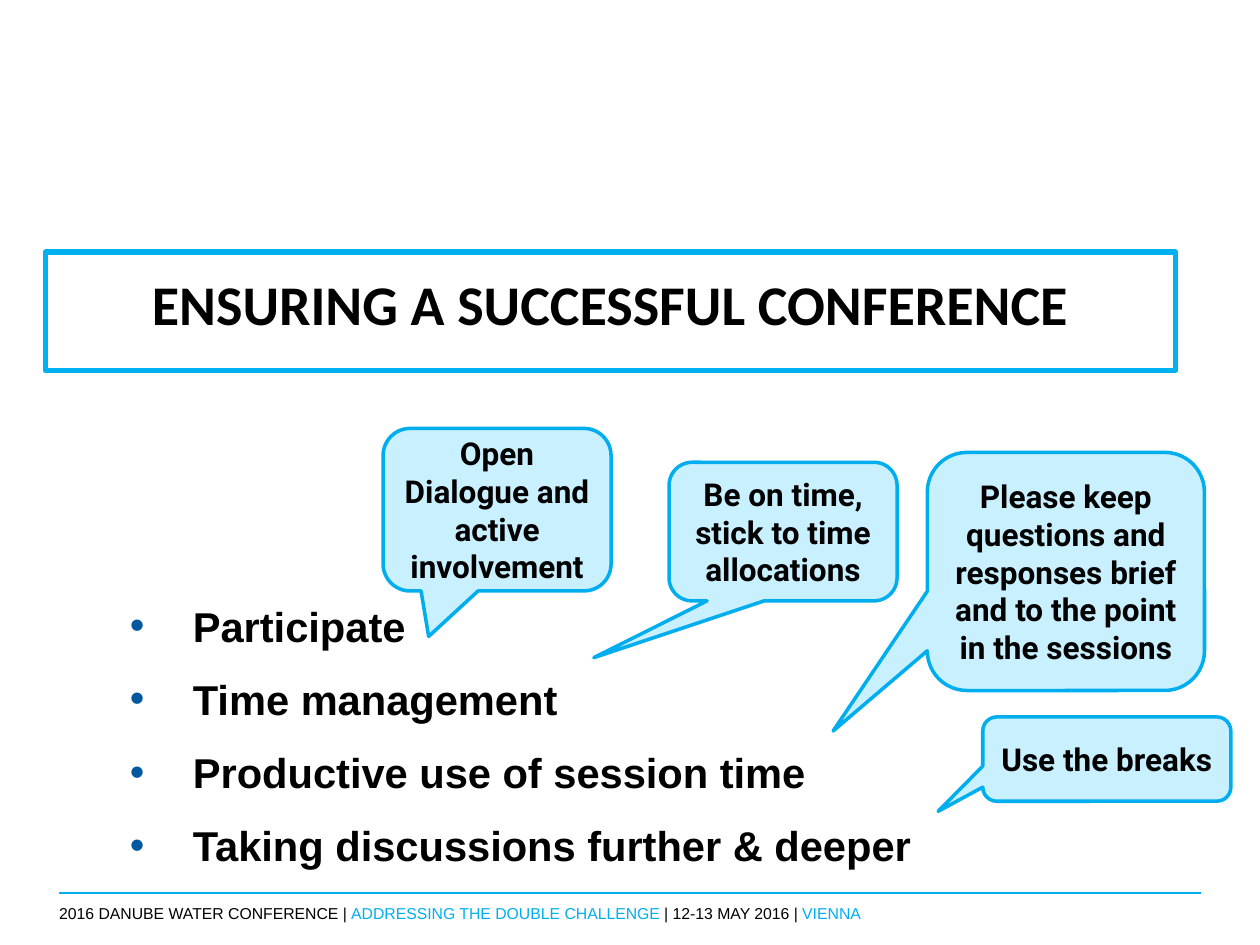
from dataclasses import dataclass

import lxml.etree
import pptx
import pptx.dml.color
import pptx.enum.shapes
import pptx.enum.text
import pptx.oxml.ns
import pptx.shapes.autoshape
import pptx.slide
import pptx.text.text
import pptx.util

Pt = pptx.util.Pt
RGB = pptx.dml.color.RGBColor
Align = pptx.enum.text.PP_ALIGN
Anchor = pptx.enum.text.MSO_ANCHOR
qn = pptx.oxml.ns.qn


@dataclass(frozen=True)
class Theme:
    ink: RGB = RGB(0x00, 0x00, 0x00)
    accent: RGB = RGB(0x00, 0xAE, 0xEF)
    title_border: RGB = RGB(0x00, 0xB0, 0xF0)
    callout_fill: RGB = RGB(0xC9, 0xF0, 0xFF)
    bullet: RGB = RGB(0x00, 0x58, 0x9F)
    title_size: float = 32
    topic_size: float = 23.8
    callout_size: float = 18
    footer_size: float = 9
    title_font: str = "Calibri"
    body_font: str = "Arial"
    callout_font: str = "Roboto"


@dataclass(frozen=True)
class Box:
    left: float
    top: float
    width: float
    height: float

    def lengths(self) -> list[pptx.util.Length]:
        return [Pt(v) for v in (self.left, self.top, self.width, self.height)]


@dataclass(frozen=True)
class Callout:
    box: Box
    tip: tuple[float, float]
    lines: tuple[str, ...]


THEME = Theme()
TITLE = "ENSURING A SUCCESSFUL CONFERENCE"
TOPICS = (
    "Participate",
    "Time management",
    "Productive use of session time",
    "Taking discussions further & deeper",
)
CALLOUTS = (
    Callout(Box(529.9, 258.5, 158.4, 136.1), (-0.84, 0.67),
            ("Please keep questions and responses brief and to the point in the sessions",)),
    Callout(Box(382.3, 264.2, 130.3, 79.2), (-0.83, 0.91),
            ("Be on time,", "stick to time allocations")),
    Callout(Box(561.6, 409.7, 141.8, 48.2), (-0.68, 0.62), ("Use the breaks",)),
    Callout(Box(218.9, 244.8, 130.3, 92.9), (-0.3, 0.78),
            ("Open Dialogue and active involvement",)),
)
FOOTER = (
    ("2016 DANUBE WATER CONFERENCE | ", THEME.ink),
    ("ADDRESSING THE DOUBLE CHALLENGE ", THEME.accent),
    ("| 12-13 MAY 2016 | ", THEME.ink),
    ("VIENNA", THEME.accent),
)


def add_run(paragraph: pptx.text.text._Paragraph, text: str, font: str, size: float,
            color: RGB = THEME.ink, bold: bool = True) -> None:
    run = paragraph.add_run()
    run.text = text
    run.font.name = font
    run.font.size = Pt(size)
    run.font.bold = bold
    run.font.color.rgb = color


def next_paragraph(frame: pptx.text.text.TextFrame, index: int) -> pptx.text.text._Paragraph:
    return frame.paragraphs[0] if index == 0 else frame.add_paragraph()


def prepare_frame(frame: pptx.text.text.TextFrame, anchor: Anchor,
                  inset_x: float = 0, inset_y: float = 0) -> None:
    frame.word_wrap = True
    frame.auto_size = pptx.enum.text.MSO_AUTO_SIZE.NONE
    frame.vertical_anchor = anchor
    frame.margin_left = frame.margin_right = Pt(inset_x)
    frame.margin_top = frame.margin_bottom = Pt(inset_y)


def add_bullet(paragraph: pptx.text.text._Paragraph, indent: float, hanging: float) -> None:
    properties = paragraph._p.get_or_add_pPr()
    properties.set("marL", str(Pt(indent)))
    properties.set("indent", str(-Pt(hanging)))
    color = lxml.etree.SubElement(properties, qn("a:buClr"))
    lxml.etree.SubElement(color, qn("a:srgbClr"), val=str(THEME.bullet))
    lxml.etree.SubElement(properties, qn("a:buFont"), typeface=THEME.body_font)
    lxml.etree.SubElement(properties, qn("a:buChar"), char="•")


def draw_footer(slide: pptx.slide.Slide) -> None:
    left, right, rule_y = 33.8, 686.2, 510.5
    footer = slide.shapes.add_textbox(*Box(left, 516.2, right - left, 22.3).lengths())
    prepare_frame(footer.text_frame, Anchor.TOP)
    for text, color in FOOTER:
        add_run(footer.text_frame.paragraphs[0], text, THEME.body_font,
                THEME.footer_size, color, bold=False)
    rule = slide.shapes.add_connector(pptx.enum.shapes.MSO_CONNECTOR.STRAIGHT,
                                      Pt(left), Pt(rule_y), Pt(right), Pt(rule_y))
    rule.line.color.rgb = THEME.accent
    rule.line.width = Pt(1)
    lxml.etree.SubElement(rule._element.spPr, qn("a:effectLst"))


def draw_title(slide: pptx.slide.Slide) -> None:
    title = slide.shapes.title
    title.left, title.top, title.width, title.height = Box(25.9, 144, 645.8, 67.7).lengths()
    title.line.color.rgb = THEME.title_border
    title.line.width = Pt(3)
    prepare_frame(title.text_frame, Anchor.MIDDLE)
    heading = title.text_frame.paragraphs[0]
    heading.alignment = Align.CENTER
    heading.line_spacing = 0.7
    add_run(heading, TITLE, THEME.title_font, THEME.title_size)


def draw_topics(slide: pptx.slide.Slide) -> None:
    topics = slide.shapes.add_textbox(*Box(38.2, 309.6, 505.4, 180.7).lengths())
    prepare_frame(topics.text_frame, Anchor.TOP)
    topics.text_frame.margin_top = Pt(33.5)
    for index, topic in enumerate(TOPICS):
        paragraph = next_paragraph(topics.text_frame, index)
        add_bullet(paragraph, indent=72, hanging=36)
        paragraph.space_after = Pt(13.2)
        add_run(paragraph, topic, THEME.body_font, THEME.topic_size)


def draw_callout(slide: pptx.slide.Slide, callout: Callout) -> None:
    bubble: pptx.shapes.autoshape.Shape = slide.shapes.add_shape(
        pptx.enum.shapes.MSO_SHAPE.ROUNDED_RECTANGULAR_CALLOUT, *callout.box.lengths())
    bubble.adjustments[0], bubble.adjustments[1] = callout.tip
    bubble.shadow.inherit = False
    bubble.fill.solid()
    bubble.fill.fore_color.rgb = THEME.callout_fill
    bubble.line.color.rgb = THEME.accent
    bubble.line.width = Pt(2)
    prepare_frame(bubble.text_frame, Anchor.MIDDLE, inset_x=7.2, inset_y=3.6)
    for index, line in enumerate(callout.lines):
        paragraph = next_paragraph(bubble.text_frame, index)
        paragraph.alignment = Align.CENTER
        add_run(paragraph, line, THEME.callout_font, THEME.callout_size)


def main() -> None:
    presentation = pptx.Presentation()
    presentation.slide_width, presentation.slide_height = Pt(720), Pt(540)
    slide = presentation.slides.add_slide(presentation.slide_layouts.get_by_name("Title Only"))
    draw_footer(slide)
    draw_title(slide)
    draw_topics(slide)
    for callout in CALLOUTS:
        draw_callout(slide, callout)
    presentation.save("out.pptx")


if __name__ == "__main__":
    main()
